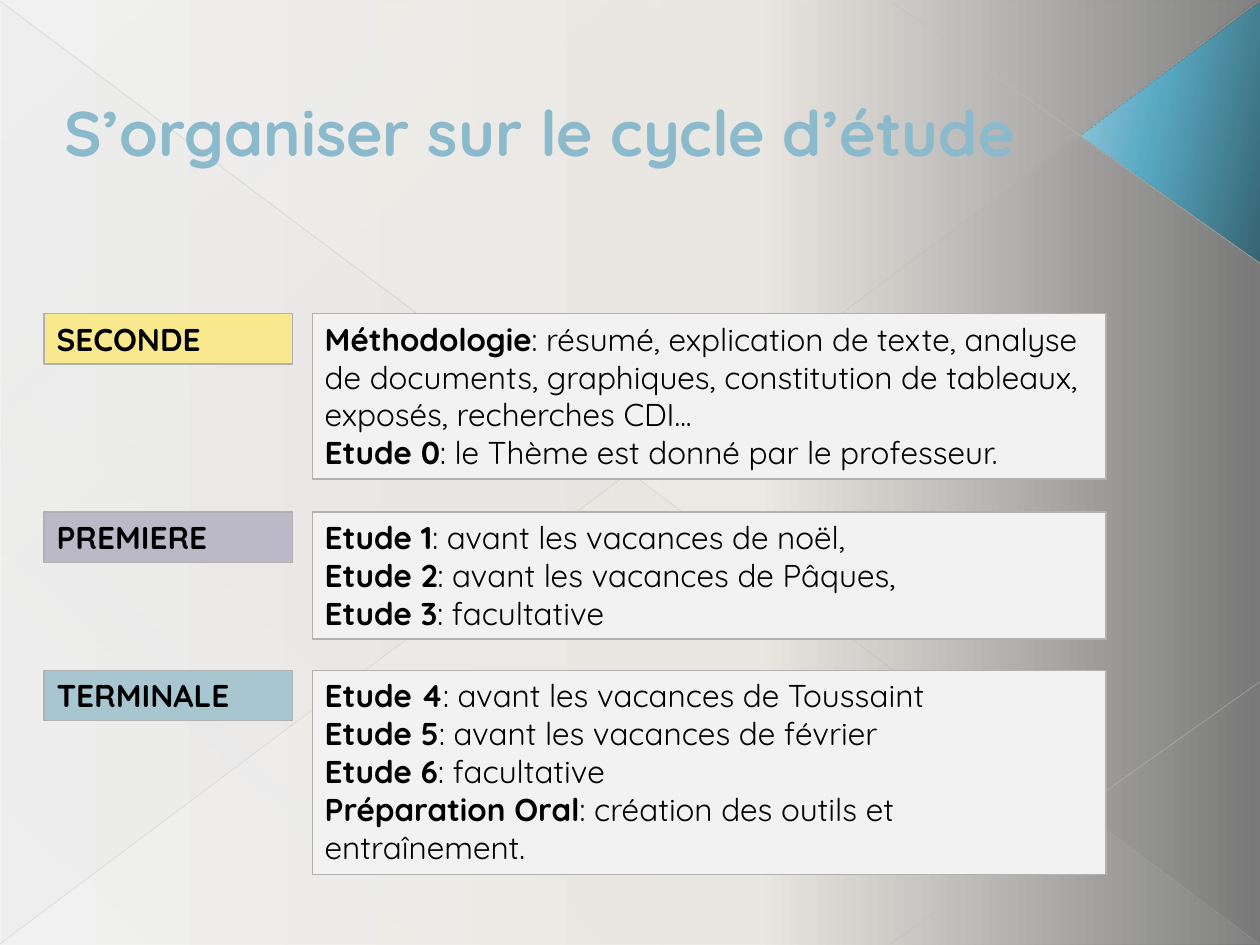
from lxml.etree import SubElement
from pptx import Presentation
from pptx.dml.color import RGBColor
from pptx.enum.shapes import MSO_CONNECTOR, MSO_SHAPE
from pptx.enum.text import MSO_ANCHOR, PP_ALIGN
from pptx.oxml.ns import qn
from pptx.util import Pt

WIDTH, HEIGHT = 720, 540
FONT = "Quicksand"
TITLE = "S’organiser sur le cycle d’étude"

# level, label colour, top, detail height, (bold lead, rest) lines
LEVELS = [
    ("SECONDE", "F9E98E", 179.2, 94.6, [
        ("Méthodologie", ": résumé, explication de texte, analyse de documents, "
                         "graphiques, constitution de tableaux, exposés, recherches CDI..."),
        ("Etude 0", ": le Thème est donné par le professeur."),
    ]),
    ("PREMIERE", "BBB8C8", 292.6, 72.6, [
        ("Etude 1", ": avant les vacances de noël,"),
        ("Etude 2", ": avant les vacances de Pâques,"),
        ("Etude 3", ": facultative"),
    ]),
    ("TERMINALE", "A8C6D0", 383, 116.6, [
        ("Etude 4", ": avant les vacances de Toussaint"),
        ("Etude 5", ": avant les vacances de février"),
        ("Etude 6", ": facultative"),
        ("Préparation Oral", ": création des outils et entraînement."),
    ]),
]
LABEL_LEFT, LABEL_WIDTH, LABEL_HEIGHT = 25.2, 142, 28.8
DETAIL_LEFT, DETAIL_WIDTH = 178.5, 453.6

# gradient stops: position %, colour, opacity %
BACKGROUND = [(0, "F2F2F2", 100), (60, "ECE9E3", 50), (100, "797979", 100)]
VEIL = [(0, "D4D2D0", 10), (70, "D4D2D0", 8), (100, "D4D2D0", 1)]
ARROW = [(0, "366473", 100), (60, "5AAAC4", 100), (100, "9BCADC", 100)]

# start, end, colour, width, opacity %
DIAGONAL = ("B7B7B7", 0.39, 35)
CORNER = ("BFBFBF", 0.47, 45)
LINES = [
    ((0, 0.7), (719.3, 539.3), *DIAGONAL),
    ((720, 389.5), (509, 539.3), *CORNER),
    ((720, 150.5), (509, 0.7), *CORNER),
    ((0, 539.3), (719.3, 0.7), *DIAGONAL),
]


def color(hex_string):
    return RGBColor.from_string(hex_string)


def set_opacity(color_element, percent):
    if percent < 100:
        SubElement(color_element, qn("a:alpha"), val=str(percent * 1000))


def set_gradient(fill, stops, angle):
    """Replace the default stops; the angle runs clockwise in degrees."""
    fill.gradient()
    gradient = fill._fill._gradFill
    for child in list(gradient):
        gradient.remove(child)
    gradient.set("rotWithShape", "1")
    stop_list = SubElement(gradient, qn("a:gsLst"))
    for position, hex_string, opacity in stops:
        stop = SubElement(stop_list, qn("a:gs"), pos=str(position * 1000))
        set_opacity(SubElement(stop, qn("a:srgbClr"), val=hex_string), opacity)
    SubElement(gradient, qn("a:lin"), ang=str(angle * 60000), scaled="0")


def add_gradient_shape(slide, kind, box, stops, angle, flip=False):
    shape = slide.shapes.add_shape(kind, *map(Pt, box))
    shape.shadow.inherit = False
    shape.line.fill.background()
    set_gradient(shape.fill, stops, angle)
    if flip:
        shape._element.spPr.find(qn("a:xfrm")).set("flipV", "1")
    return shape


def add_line(slide, start, end, hex_string, width, opacity):
    line = slide.shapes.add_connector(MSO_CONNECTOR.STRAIGHT, *map(Pt, start + end))
    line.line.width = Pt(width)
    line.line.color.rgb = color(hex_string)
    properties = line._element.spPr
    set_opacity(properties.find(".//" + qn("a:srgbClr")), opacity)
    SubElement(properties, qn("a:effectLst"))


def add_box(slide, box, fill, lines):
    shape = slide.shapes.add_shape(MSO_SHAPE.RECTANGLE, *map(Pt, box))
    shape.shadow.inherit = False
    shape.fill.solid()
    shape.fill.fore_color.rgb = color(fill)
    shape.line.color.rgb = color("B1B1B1")
    shape.line.width = Pt(0.75)
    frame = shape.text_frame
    frame.word_wrap = True
    frame.vertical_anchor = MSO_ANCHOR.TOP
    for index, (lead, rest) in enumerate(lines):
        paragraph = frame.add_paragraph() if index else frame.paragraphs[0]
        paragraph.alignment = PP_ALIGN.LEFT
        style(paragraph.font, 18, "000000")
        for text, bold in ((lead, True), (rest, False)):
            if text:
                run = paragraph.add_run()
                run.text = text
                style(run.font, 18, "000000")
                run.font.bold = bold


def style(font, size, hex_string):
    font.name = FONT
    font.size = Pt(size)
    font.color.rgb = color(hex_string)


def add_title(slide):
    title = slide.shapes.add_textbox(Pt(30), Pt(21.6), Pt(570.5), Pt(107.3))
    frame = title.text_frame
    frame.word_wrap = True
    frame.vertical_anchor = MSO_ANCHOR.MIDDLE
    paragraph = frame.paragraphs[0]
    paragraph.text = TITLE
    style(paragraph.font, 36, "8ABACB")
    paragraph.font.bold = True


def add_backdrop(slide):
    set_gradient(slide.background.fill, BACKGROUND, 0)
    for flip in (False, True):
        add_gradient_shape(slide, MSO_SHAPE.RIGHT_TRIANGLE,
                           (0.7, 0.7, 718.6, 538.6), VEIL, 133, flip)
    arrow = add_gradient_shape(slide, MSO_SHAPE.ISOSCELES_TRIANGLE,
                               (594.7, 24.5, 149, 102.2), ARROW, 258, flip=True)
    arrow.adjustments[0] = 0.513
    arrow.rotation = 90
    for line in LINES:
        add_line(slide, *line)


def main():
    presentation = Presentation()
    presentation.slide_width, presentation.slide_height = Pt(WIDTH), Pt(HEIGHT)
    slide = presentation.slides.add_slide(presentation.slide_layouts[6])
    add_backdrop(slide)
    add_title(slide)
    for level, fill, top, height, lines in LEVELS:
        add_box(slide, (DETAIL_LEFT, top, DETAIL_WIDTH, height), "F2F2F2", lines)
        add_box(slide, (LABEL_LEFT, top, LABEL_WIDTH, LABEL_HEIGHT), fill, [(level, "")])
    presentation.save("out.pptx")


if __name__ == "__main__":
    main()
